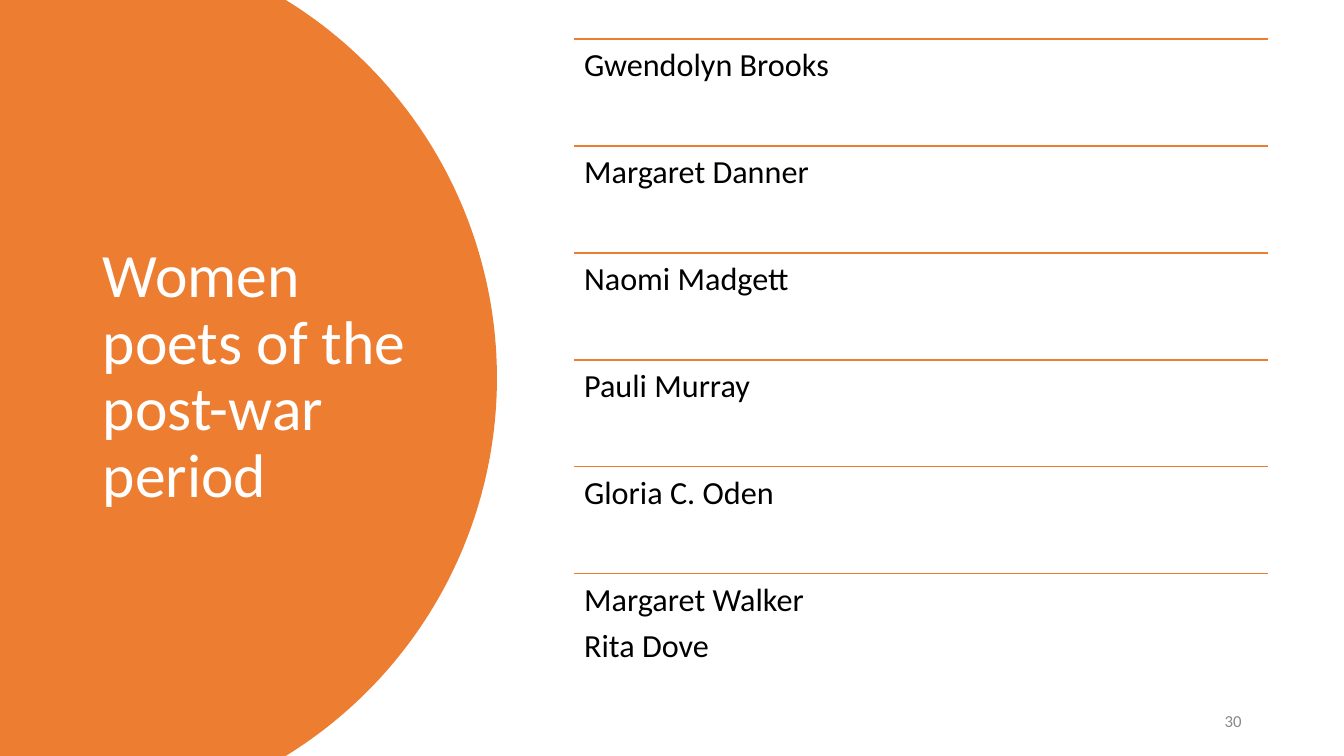
import math

import pptx
import pptx.dml.color
import pptx.enum.shapes
import pptx.enum.text
import pptx.oxml
import pptx.util

Pt = pptx.util.Pt
RGB = pptx.dml.color.RGBColor
ALIGN = pptx.enum.text.PP_ALIGN
ANCHOR = pptx.enum.text.MSO_ANCHOR

ORANGE = RGB(0xED, 0x7D, 0x31)
WHITE = RGB(0xFF, 0xFF, 0xFF)
BLACK = RGB(0, 0, 0)
GREY = RGB(0x89, 0x89, 0x89)

WIDTH, HEIGHT = 960, 540
POETS = [
    ["Gwendolyn Brooks"],
    ["Margaret Danner"],
    ["Naomi Madgett"],
    ["Pauli Murray"],
    ["Gloria C. Oden"],
    ["Margaret Walker", "Rita Dove"],
]


class SlideBuilder:
    font = "Calibri"

    def __init__(self, prs):
        self.s = prs.slides.add_slide(prs.slide_layouts[5])

    def fill_text(self, tf, lines, size, color, align=ALIGN.LEFT, anchor=ANCHOR.TOP,
                  spacing=None, after=0):
        tf.word_wrap = True
        tf.auto_size = pptx.enum.text.MSO_AUTO_SIZE.NONE
        tf.vertical_anchor = anchor
        for i, line in enumerate(lines):
            p = tf.add_paragraph() if i else tf.paragraphs[0]
            p.alignment = align
            p.line_spacing = spacing
            p.space_after = Pt(after)
            r = p.add_run()
            r.text = line
            r.font.name = self.font
            r.font.size = Pt(size)
            r.font.color.rgb = color

    def title(self, text, x, y, w, h):
        sp = self.s.shapes.title
        sp.left, sp.top, sp.width, sp.height = Pt(x), Pt(y), Pt(w), Pt(h)
        self.fill_text(sp.text_frame, [text], 44, WHITE, anchor=ANCHOR.MIDDLE, spacing=0.9)

    def text(self, shapes, lines, x, y, w, h, size, color, inset=None, **style):
        tf = shapes.add_textbox(Pt(x), Pt(y), Pt(w), Pt(h)).text_frame
        if inset is not None:
            tf.margin_left = tf.margin_right = Pt(inset)
            tf.margin_top = tf.margin_bottom = Pt(inset)
        self.fill_text(tf, lines, size, color, **style)

    def rule(self, shapes, x, y, w):
        line = shapes.add_connector(pptx.enum.shapes.MSO_CONNECTOR.STRAIGHT,
                                    Pt(x), Pt(y), Pt(x + w), Pt(y))
        line.line.color.rgb = ORANGE
        line.line.width = Pt(1)
        line._element.spPr.append(pptx.oxml.parse_xml(
            '<a:effectLst xmlns:a="http://schemas.openxmlformats.org/drawingml/2006/main"/>'))

    def round_panel(self, center_x, radius, steps=120):
        """Fill the left edge up to a circular arc, behind everything else."""
        mid = HEIGHT / 2
        end = math.asin(mid / radius)
        angles = [end * (2 * i / steps - 1) for i in range(steps + 1)]
        arc = [(Pt(center_x + radius * math.cos(a)), Pt(mid + radius * math.sin(a)))
               for a in angles]
        builder = self.s.shapes.build_freeform(0, 0)
        builder.add_line_segments(arc + [(0, Pt(HEIGHT))], close=True)
        sp = builder.convert_to_shape()
        sp.shadow.inherit = False
        sp.fill.solid()
        sp.fill.fore_color.rgb = ORANGE
        sp.line.fill.background()
        self.s.shapes._spTree.insert(2, sp._element)

    def ruled_list(self, rows, x, y, w, row_h):
        shapes = self.s.shapes.add_group_shape().shapes
        for i, lines in enumerate(rows):
            top = y + i * row_h
            self.rule(shapes, x, top, w)
            self.text(shapes, lines, x, top, w, row_h, 23, BLACK, inset=7,
                      spacing=0.9, after=8)


def main():
    prs = pptx.Presentation()
    prs.slide_width, prs.slide_height = Pt(WIDTH), Pt(HEIGHT)
    slide = SlideBuilder(prs)
    slide.round_panel(center_x=38, radius=317)
    slide.title("Women poets of the post-war period", 66.24, 50.4, 232.56, 438.48)
    slide.text(slide.s.shapes, ["30"], 678, 500.6, 216, 28.8, 12, GREY,
               align=ALIGN.RIGHT, anchor=ANCHOR.MIDDLE, after=6)
    slide.ruled_list(POETS, x=410.2, y=28, w=495.3, row_h=76.34)
    prs.save("out.pptx")


if __name__ == "__main__":
    main()
